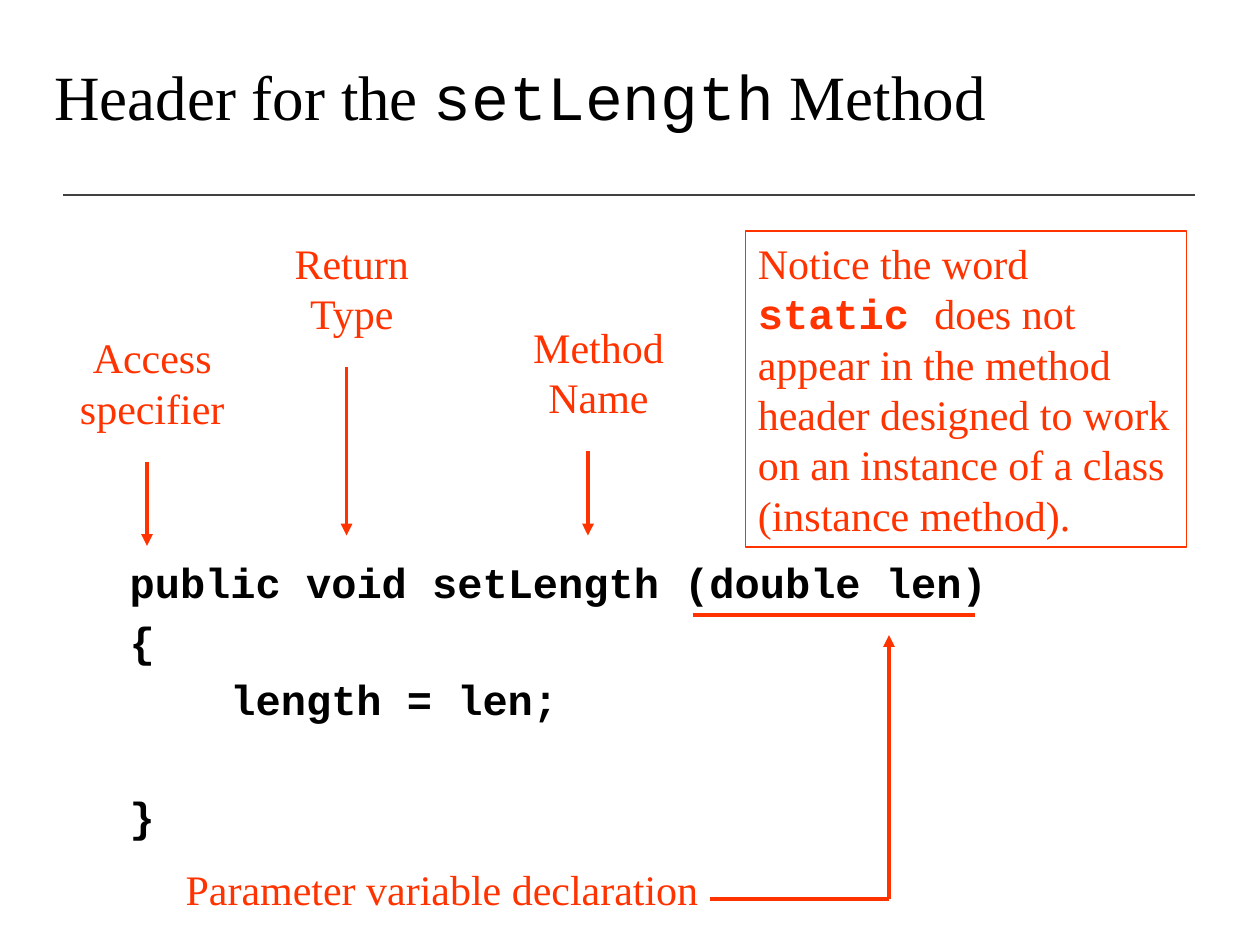
from dataclasses import dataclass

from pptx import Presentation
from pptx.dml.color import RGBColor
from pptx.enum.shapes import MSO_CONNECTOR, MSO_SHAPE
from pptx.enum.text import MSO_ANCHOR, MSO_AUTO_SIZE, PP_ALIGN
from pptx.oxml.ns import qn
from pptx.util import Pt
from lxml.etree import SubElement


@dataclass(frozen=True)
class Theme:
    """Colours, fonts, type sizes and line widths of the slide."""
    ink: RGBColor = RGBColor(0, 0, 0)
    rule: RGBColor = RGBColor(0x40, 0x40, 0x40)
    accent: RGBColor = RGBColor(0xFF, 0x33, 0x00)
    serif: str = "Times New Roman"
    mono: str = "Courier New"
    title_size: int = 36
    body_size: int = 24
    arrow_width: float = 2.25
    rule_width: float = 1
    border_width: float = 0.75


THEME = Theme()


def format_run(run, font, size, color, bold=False):
    """Set the typeface, size, colour and weight of a run."""
    run.font.name = font
    run.font.size = Pt(size)
    run.font.color.rgb = color
    run.font.bold = bold


def add_run(paragraph, text, font, size, color, bold=False):
    """Append a formatted run to a paragraph."""
    run = paragraph.add_run()
    run.text = text
    format_run(run, font, size, color, bold)


def add_text_box(slide, box):
    """Add a wrapping text box and return its text frame."""
    text_frame = slide.shapes.add_textbox(*map(Pt, box)).text_frame
    text_frame.word_wrap = True
    return text_frame


def add_line(slide, start, end, color, width, arrow=False):
    """Draw a straight line, with an optional arrowhead at its end."""
    connector = slide.shapes.add_connector(
        MSO_CONNECTOR.STRAIGHT, *map(Pt, (*start, *end)))
    connector.line.color.rgb = color
    connector.line.width = Pt(width)
    if arrow:
        SubElement(connector.line._get_or_add_ln(), qn("a:tailEnd"), type="triangle")
    SubElement(connector._element.spPr, qn("a:effectLst"))


def add_title(slide, box):
    """Place the slide title with the method name in monospace."""
    text_frame = add_text_box(slide, box)
    text_frame.vertical_anchor = MSO_ANCHOR.MIDDLE
    paragraph = text_frame.paragraphs[0]
    paragraph.line_spacing = 0.9
    for text, font in (("Header for the ", THEME.serif),
                       ("setLength", THEME.mono),
                       (" Method", THEME.serif)):
        add_run(paragraph, text, font, THEME.title_size, THEME.ink)


def add_code(slide, box):
    """Place the method source, with its body indented by four characters."""
    lines = (("public void setLength (double len)", 0, 7.5),
             ("{", 0, 7.5),
             ("length = len;", 57.6, 7.5),
             ("}", 0, 41))
    text_frame = add_text_box(slide, box)
    text_frame.text = "\n".join(text for text, _, _ in lines)
    for paragraph, (_, indent, space) in zip(text_frame.paragraphs, lines):
        paragraph.line_spacing = 0.9
        paragraph.space_before = Pt(space)
        properties = paragraph._p.get_or_add_pPr()
        properties.set("marL", str(Pt(13.5 + indent)))
        properties.set("indent", str(-Pt(13.5)))
        format_run(paragraph.runs[0], THEME.mono, THEME.body_size, THEME.ink, True)


def add_label(slide, box, text, alignment=PP_ALIGN.CENTER):
    """Place an accent-coloured label."""
    text_frame = add_text_box(slide, box)
    text_frame.auto_size = MSO_AUTO_SIZE.SHAPE_TO_FIT_TEXT
    text_frame.text = text
    paragraph = text_frame.paragraphs[0]
    paragraph.alignment = alignment
    format_run(paragraph.runs[0], THEME.serif, THEME.body_size, THEME.accent)


def add_callout(slide, box, text, arrow_offset, arrow_length):
    """Place a label with an arrow pointing down from beneath it."""
    left, top, _, height = box
    add_label(slide, box, text)
    x, y = left + arrow_offset, top + height + 13
    add_line(slide, (x, y), (x, y + arrow_length),
             THEME.accent, THEME.arrow_width, arrow=True)


def add_parameter_callout(slide, box):
    """Place the parameter label, its bent arrow and the underline above."""
    left, top, width, _ = box
    add_label(slide, box, "Parameter variable declaration", PP_ALIGN.LEFT)
    corner = (left + 409, top + 23.5)
    add_line(slide, corner, (corner[0], top - 127),
             THEME.accent, THEME.arrow_width, arrow=True)
    add_line(slide, (left + 296.8, top - 138.5), (left + 458, top - 138.5),
             THEME.accent, THEME.arrow_width)
    add_line(slide, (left + width - 11.5, corner[1]), corner,
             THEME.accent, THEME.arrow_width)


def add_notice(slide, box):
    """Place the bordered remark about instance methods."""
    shape = slide.shapes.add_shape(MSO_SHAPE.RECTANGLE, *map(Pt, box))
    shape.shadow.inherit = False
    shape.fill.background()
    shape.line.color.rgb = THEME.accent
    shape.line.width = Pt(THEME.border_width)
    text_frame = shape.text_frame
    text_frame.word_wrap = True
    text_frame.auto_size = MSO_AUTO_SIZE.SHAPE_TO_FIT_TEXT
    text_frame.vertical_anchor = MSO_ANCHOR.TOP
    paragraph = text_frame.paragraphs[0]
    paragraph.alignment = PP_ALIGN.LEFT
    for text, font, bold in (
            ("Notice the word ", THEME.serif, False),
            ("static ", THEME.mono, True),
            ("does not appear in the method header designed to work "
             "on an instance of a class (instance method).", THEME.serif, False)):
        add_run(paragraph, text, font, THEME.body_size, THEME.accent, bold)


def main():
    """Build the slide and save it."""
    presentation = Presentation()
    presentation.slide_width, presentation.slide_height = Pt(720), Pt(540)
    slide = presentation.slides.add_slide(presentation.slide_layouts[6])
    add_line(slide, (36, 111.5), (683, 111.5), THEME.rule, THEME.rule_width)
    add_title(slide, (24, 12, 612, 90))
    add_code(slide, (67, 318, 562, 172))
    for box, text, offset, length in (
            ((12, 186, 150, 65), "Access specifier", 72, 48),
            ((144, 132, 114, 65), "Return Type", 54, 96),
            ((294, 180, 96, 65), "Method Name", 42, 48)):
        add_callout(slide, box, text, offset, length)
    add_parameter_callout(slide, (99, 490, 318.5, 36))
    add_notice(slide, (426, 132, 252, 180.6))
    presentation.save("out.pptx")


if __name__ == "__main__":
    main()
